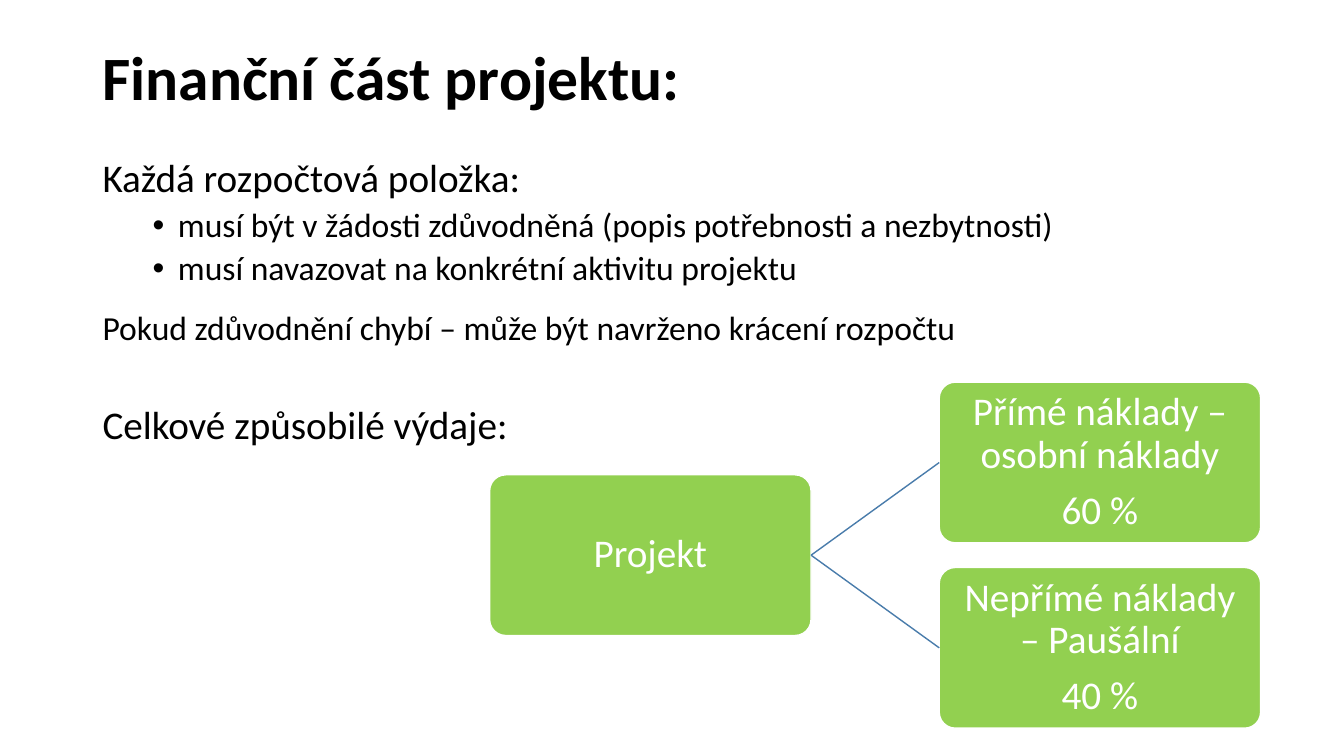
import pptx
import pptx.util
import pptx.dml.color
import pptx.enum.shapes
import pptx.enum.text
from lxml import etree
from pptx.util import Cm, Pt

COLORS = {"text": "000000", "box": "92D050", "white": "FFFFFF", "link": "497CAB"}
FONT = "Calibri"
BOX_W, BOX_H = 8.1, 4.05
PROJECT_X, COSTS_X = 12.34, 23.67
COSTS_Y, COSTS_STEP = 9.63, 4.67


def rgb(name):
    return pptx.dml.color.RGBColor.from_string(COLORS[name])


def add_run(p, text, size, color="text", bold=False):
    r = p.add_run()
    r.text = text
    r.font.name = FONT
    r.font.size = Pt(size)
    r.font.bold = bold
    r.font.color.rgb = rgb(color)


def set_spacing(p, before=0, after=0):
    p.line_spacing = 0.9
    p.space_before = Pt(before)
    p.space_after = Pt(after)


def set_bullet(p, shown):
    pPr = p._p.get_or_add_pPr()
    pPr.set("marL", str(Cm(1.9) if shown else 0))
    pPr.set("indent", str(-Cm(0.64) if shown else 0))
    if shown:
        font = etree.SubElement(pPr, pptx.oxml.ns.qn("a:buFont"))
        font.set("typeface", "Arial")
        etree.SubElement(pPr, pptx.oxml.ns.qn("a:buChar")).set("char", "•")
    else:
        etree.SubElement(pPr, pptx.oxml.ns.qn("a:buNone"))


def place(sp, x, y, w, h):
    sp.left, sp.top, sp.width, sp.height = Cm(x), Cm(y), Cm(w), Cm(h)


def fill_title(s, text):
    sp = s.shapes.title
    place(sp, 2.33, 0.2, 29.21, 3.68)
    tf = sp.text_frame
    tf.auto_size = pptx.enum.text.MSO_AUTO_SIZE.NONE
    tf.vertical_anchor = pptx.enum.text.MSO_ANCHOR.MIDDLE
    p = tf.paragraphs[0]
    p.alignment = pptx.enum.text.PP_ALIGN.LEFT
    set_spacing(p)
    add_run(p, text, 44, bold=True)


def fill_body(s, items):
    sp = s.placeholders[1]
    place(sp, 2.33, 3.88, 29.21, 12.09)
    tf = sp.text_frame
    tf.auto_size = pptx.enum.text.MSO_AUTO_SIZE.NONE
    for i, (text, level, size, bullet, before, after) in enumerate(items):
        p = tf.add_paragraph() if i else tf.paragraphs[0]
        p.level = level
        set_spacing(p, before, after)
        set_bullet(p, bullet)
        add_run(p, text, size)


def add_box(s, x, y, lines):
    sp = s.shapes.add_shape(pptx.enum.shapes.MSO_SHAPE.ROUNDED_RECTANGLE,
                            Cm(x), Cm(y), Cm(BOX_W), Cm(BOX_H))
    sp.adjustments[0] = 0.1
    sp.shadow.inherit = False
    sp.fill.solid()
    sp.fill.fore_color.rgb = rgb("box")
    sp.line.color.rgb = rgb("white")
    sp.line.width = Pt(1)
    tf = sp.text_frame
    tf.word_wrap = True
    tf.vertical_anchor = pptx.enum.text.MSO_ANCHOR.MIDDLE
    tf.margin_left = tf.margin_right = tf.margin_top = tf.margin_bottom = Cm(0.17)
    for i, text in enumerate(lines):
        p = tf.add_paragraph() if i else tf.paragraphs[0]
        p.alignment = pptx.enum.text.PP_ALIGN.CENTER
        set_spacing(p, after=9.8)
        add_run(p, text, 28, "white")
    return sp


def add_link(s, start, end):
    """Join the right side of start to the left side of end."""
    c = s.shapes.add_connector(pptx.enum.shapes.MSO_CONNECTOR.STRAIGHT, 0, 0, 0, 0)
    c.begin_connect(start, 3)
    c.end_connect(end, 1)
    c.line.color.rgb = rgb("link")
    c.line.width = Pt(1)
    etree.SubElement(c._element.spPr, pptx.oxml.ns.qn("a:effectLst"))


def main():
    prs = pptx.Presentation()
    prs.slide_width, prs.slide_height = Cm(33.87), Cm(19.05)
    s = prs.slides.add_slide(prs.slide_layouts[1])
    fill_title(s, "Finanční část projektu:")
    # text, level, size, bullet, space before, space after
    fill_body(s, [
        ("Každá rozpočtová položka:", 0, 28, False, 10, 0),
        ("musí být v žádosti zdůvodněná (popis potřebnosti a nezbytnosti)",
         1, 24, True, 5, 0),
        ("musí navazovat na konkrétní aktivitu projektu", 1, 24, True, 5, 12),
        ("Pokud zdůvodnění chybí – může být navrženo krácení rozpočtu",
         1, 24, False, 5, 0),
        ("Celkové způsobilé výdaje:", 1, 28, False, 41, 0),
    ])
    project = add_box(s, PROJECT_X, COSTS_Y + COSTS_STEP / 2, ["Projekt"])
    costs = [["Přímé náklady – osobní náklady", "60 %"],
             ["Nepřímé náklady – Paušální", "40 %"]]
    for i, lines in enumerate(costs):
        box = add_box(s, COSTS_X, COSTS_Y + i * COSTS_STEP, lines)
        add_link(s, project, box)
    prs.save("out.pptx")


if __name__ == "__main__":
    main()
